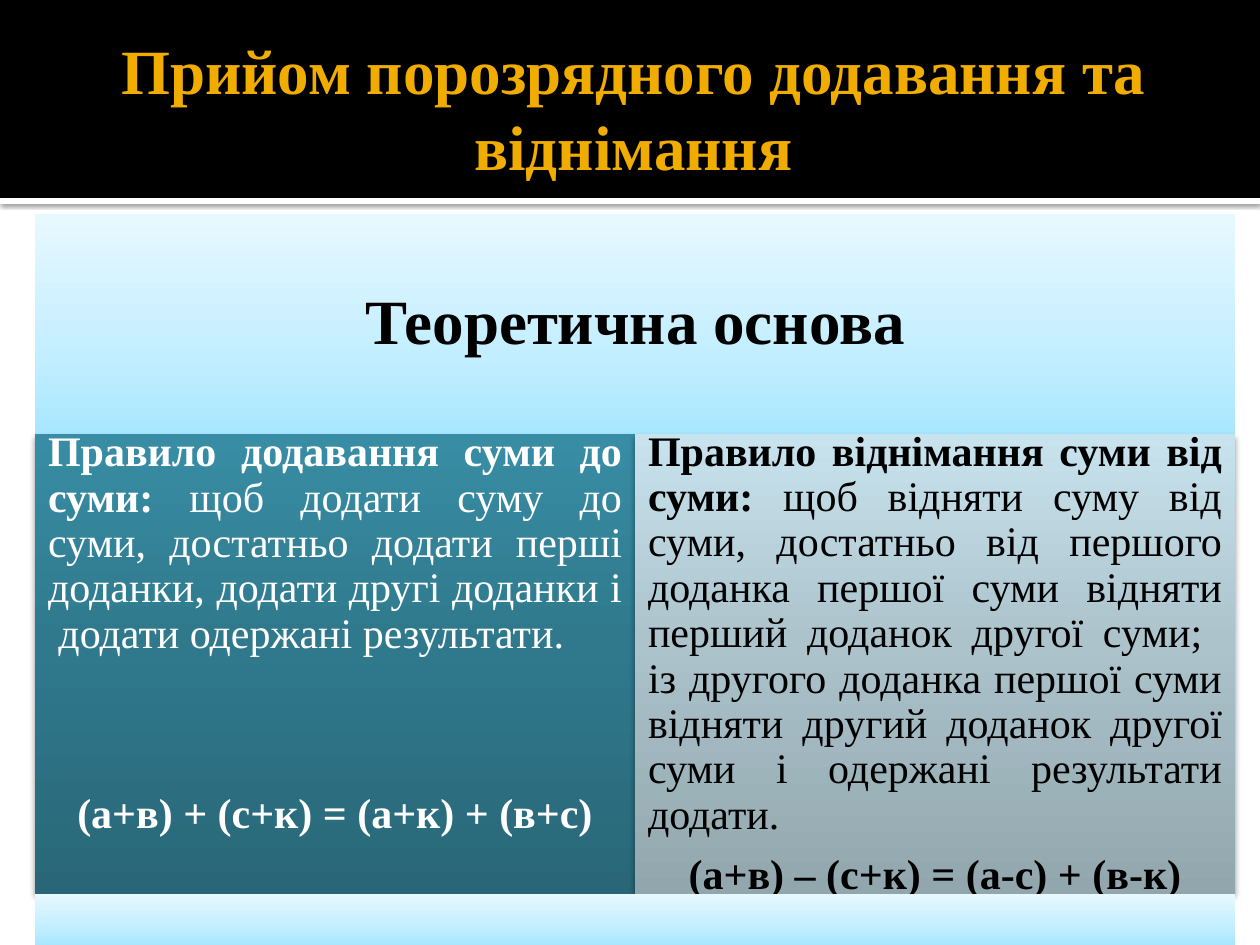
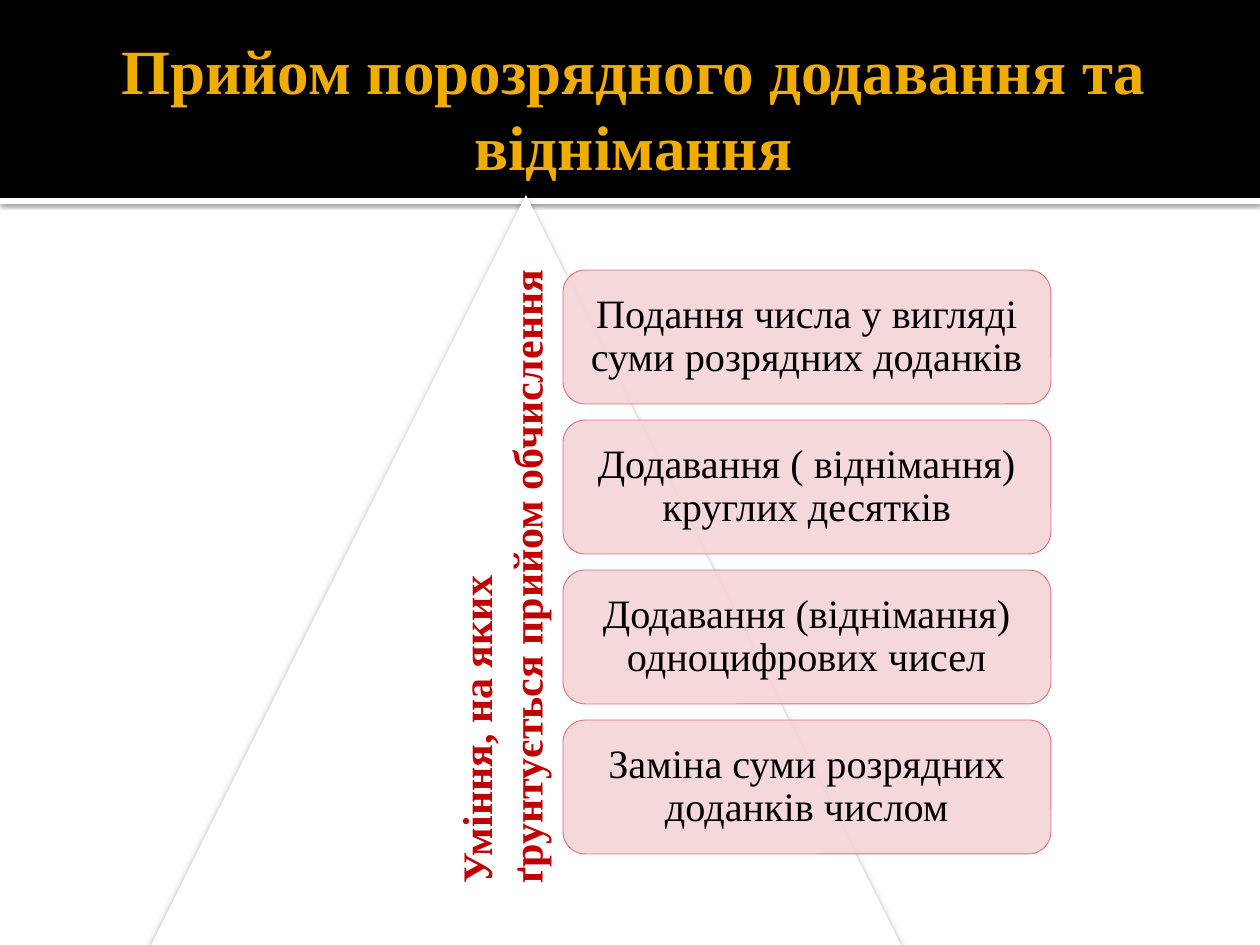
import copy

import pptx
import pptx.dml.color
import pptx.enum.shapes
import pptx.enum.text
import pptx.oxml
import pptx.oxml.ns
import pptx.util

RGBColor = pptx.dml.color.RGBColor
SHAPE = pptx.enum.shapes.MSO_SHAPE
ALIGN = pptx.enum.text.PP_ALIGN
ANCHOR = pptx.enum.text.MSO_ANCHOR
qn = pptx.oxml.ns.qn

BLACK = RGBColor(0x00, 0x00, 0x00)
WHITE = RGBColor(0xFF, 0xFF, 0xFF)
GOLD = RGBColor(0xF0, 0xAD, 0x00)
RED = RGBColor(0xC0, 0x00, 0x00)
PINK = RGBColor(0xF5, 0xD4, 0xD7)
ROSE = RGBColor(0xE6, 0x6C, 0x7D)
SKY = [(0, RGBColor(0xA9, 0xE7, 0xFF)), (0.35, RGBColor(0xC2, 0xEE, 0xFF)),
       (1, RGBColor(0xE8, 0xF8, 0xFF))]
TEAL = [(0, RGBColor(0x29, 0x67, 0x78)), (0.55, RGBColor(0x30, 0x79, 0x8D)),
        (1, RGBColor(0x38, 0x8D, 0xA4))]
STEEL = [(0, RGBColor(0x92, 0xA6, 0xAD)), (0.55, RGBColor(0xAC, 0xC3, 0xCC)),
         (1, RGBColor(0xC8, 0xE3, 0xEE))]

TITLE = "Прийом порозрядного додавання та віднімання"
BASIS = "Теоретична основа"
RULES = [
    {"name": "Правило додавання суми до суми:",
     "text": " щоб додати суму до суми, достатньо додати перші доданки, "
             "додати другі доданки і  додати одержані результати.",
     "formula": "(а+в) + (с+к) = (а+к) + (в+с)",
     "gradient": TEAL, "color": WHITE, "gap": 77, "bottom": 60},
    {"name": "Правило віднімання суми від суми: ",
     "text": "щоб відняти суму від суми, достатньо від першого доданка першої суми "
             "відняти перший доданок другої суми;  із другого доданка першої суми "
             "відняти другий доданок другої суми і одержані результати додати.",
     "formula": "(а+в) – (с+к) = (а-с) + (в-к)",
     "gradient": STEEL, "color": BLACK, "gap": 8.4, "bottom": 0},
]
SKILLS_HEADING = ["Уміння, на яких", "ґрунтується прийом обчислення"]
SKILLS = [
    "Подання числа у вигляді суми розрядних доданків",
    "Додавання ( віднімання) круглих десятків",
    "Додавання (віднімання) одноцифрових чисел",
    "Заміна суми розрядних доданків числом",
]

FONT = "Times New Roman"
EMU_PER_PX = 914400 / 126
PAGE_WIDTH, PAGE_HEIGHT = 1260, 945
BAND_HEIGHT = 198
TITLE_AREA = (63, 21, 1134, 173)
PANEL_LEFT, PANEL_TOP, PANEL_WIDTH = 35, 214, 1200
BASIS_HEIGHT, RULE_HEIGHT = 220, 460
SKILL_LEFT, SKILL_TOP, SKILL_WIDTH, SKILL_HEIGHT = 563, 270, 488, 134
SKILL_STEP = 150


def px(value):
    return pptx.util.Emu(round(value * EMU_PER_PX))


def place(box, area):
    box.left, box.top, box.width, box.height = map(px, area)


def add_box(page, kind, area, fill):
    box = page.shapes.add_shape(kind, *map(px, area))
    box.shadow.inherit = False
    box.line.fill.background()
    if isinstance(fill, list):
        box.fill.gradient()
        box.fill.gradient_angle = 90
        stops = box.element.spPr.find(".//" + qn("a:gsLst"))
        stops.append(copy.deepcopy(stops[-1]))
        for stop, (position, color) in zip(box.fill.gradient_stops, fill):
            stop.position = position
            stop.color.rgb = color
    else:
        box.fill.solid()
        box.fill.fore_color.rgb = fill
    return box


def add_shadow(box, opacity, blur, distance):
    effects = box.element.spPr.find(qn("a:effectLst"))
    effects.append(pptx.oxml.parse_xml(
        f'<a:outerShdw {pptx.oxml.ns.nsdecls("a")} blurRad="{pptx.util.Pt(blur)}" '
        f'dist="{pptx.util.Pt(distance)}" dir="5400000" algn="ctr" rotWithShape="0">'
        f'<a:srgbClr val="{BLACK}"><a:alpha val="{opacity * 1000}"/></a:srgbClr>'
        '</a:outerShdw>'))


def set_margins(frame, left, top, right, bottom):
    frame.margin_left, frame.margin_top = px(left), px(top)
    frame.margin_right, frame.margin_bottom = px(right), px(bottom)


def style_span(span, size, color, bold):
    span.font.name = FONT
    span.font.size = pptx.util.Pt(size)
    span.font.color.rgb = color
    span.font.bold = bold


def write(box, text, size, color, bold, margins):
    frame = box.text_frame
    frame.word_wrap = True
    frame.vertical_anchor = ANCHOR.MIDDLE
    set_margins(frame, *margins)
    frame.text = text
    para = frame.paragraphs[0]
    para.alignment = ALIGN.CENTER
    style_span(para.runs[0], size, color, bold)
    return para


def prepare_layout(deck):
    layout = deck.slide_layouts.get_by_name("Title Only")
    place(layout.placeholders[0], TITLE_AREA)
    return layout


def move_bands_to_layout(page, layout):
    stripe = add_box(page, SHAPE.RECTANGLE, (0, BAND_HEIGHT, PAGE_WIDTH, 6), WHITE)
    add_shadow(stripe, 60, 2.5, 0.8)
    band = add_box(page, SHAPE.RECTANGLE, (0, 0, PAGE_WIDTH, BAND_HEIGHT), BLACK)
    for index, box in enumerate((stripe, band)):
        layout.shapes.element.insert(2 + index, box.element)


def add_page(deck, layout):
    page = deck.slides.add_slide(layout)
    title = page.shapes.title
    place(title, TITLE_AREA)
    write(title, TITLE, 36, GOLD, True, (13, 6, 6, 6))
    title.text_frame.auto_size = pptx.enum.text.MSO_AUTO_SIZE.NONE
    return page


def add_rule(page, rule, area):
    box = add_box(page, SHAPE.RECTANGLE, area, rule["gradient"])
    add_shadow(box, 38, 3.1, 2)
    inset = 0 if rule["bottom"] else 13
    para = write(box, rule["name"], 24, rule["color"], True,
                 (13, inset, 13, rule["bottom"] or inset))
    para.alignment = ALIGN.JUSTIFY
    para.line_spacing = 0.9
    para.space_after = pptx.util.Pt(rule["gap"])
    span = para.add_run()
    span.text = rule["text"]
    style_span(span, 24, rule["color"], False)
    formula = box.text_frame.add_paragraph()
    formula.text = rule["formula"]
    formula.alignment = ALIGN.CENTER
    formula.line_spacing = 0.9
    style_span(formula.runs[0], 24, rule["color"], True)


def build_basis(page):
    basis = add_box(page, SHAPE.RECTANGLE,
                    (PANEL_LEFT, PANEL_TOP, PANEL_WIDTH, BASIS_HEIGHT), SKY)
    write(basis, BASIS, 36, BLACK, True, (19, 19, 19, 19)).line_spacing = 0.9
    rule_top = PANEL_TOP + BASIS_HEIGHT
    rule_width = PANEL_WIDTH // len(RULES)
    for index, rule in enumerate(RULES):
        left = PANEL_LEFT + index * rule_width
        add_rule(page, rule, (left, rule_top, rule_width, RULE_HEIGHT))
    foot_top = rule_top + RULE_HEIGHT
    add_box(page, SHAPE.RECTANGLE,
            (PANEL_LEFT, foot_top, PANEL_WIDTH, PAGE_HEIGHT - foot_top), SKY)


def build_skills(page):
    triangle = add_box(page, SHAPE.ISOSCELES_TRIANGLE, (151, 195, 750, 750), WHITE)
    add_shadow(triangle, 38, 3.5, 2)
    for index, skill in enumerate(SKILLS):
        top = SKILL_TOP + index * SKILL_STEP
        box = add_box(page, SHAPE.ROUNDED_RECTANGLE,
                      (SKILL_LEFT, top, SKILL_WIDTH, SKILL_HEIGHT), PINK)
        color = box.element.spPr.find(qn("a:solidFill")).find(qn("a:srgbClr"))
        color.append(pptx.oxml.parse_xml(
            f'<a:alpha {pptx.oxml.ns.nsdecls("a")} val="90000"/>'))
        box.line.color.rgb = ROSE
        box.line.width = pptx.util.Pt(0.5)
        write(box, skill, 23, BLACK, False, (13, 13, 13, 13)).line_spacing = 0.9
    heading = page.shapes.add_textbox(*map(px, (444, 242, 127, 654)))
    frame = heading.text_frame
    frame.word_wrap = True
    frame.text = "\n".join(SKILLS_HEADING)
    frame._txBody.bodyPr.set("vert", "vert270")
    for para in frame.paragraphs:
        style_span(para.runs[0], 24, RED, True)


def main():
    deck = pptx.Presentation()
    deck.slide_width, deck.slide_height = px(PAGE_WIDTH), px(PAGE_HEIGHT)
    layout = prepare_layout(deck)
    basis_page = add_page(deck, layout)
    move_bands_to_layout(basis_page, layout)
    build_basis(basis_page)
    build_skills(add_page(deck, layout))
    deck.save("out.pptx")


if __name__ == "__main__":
    main()
